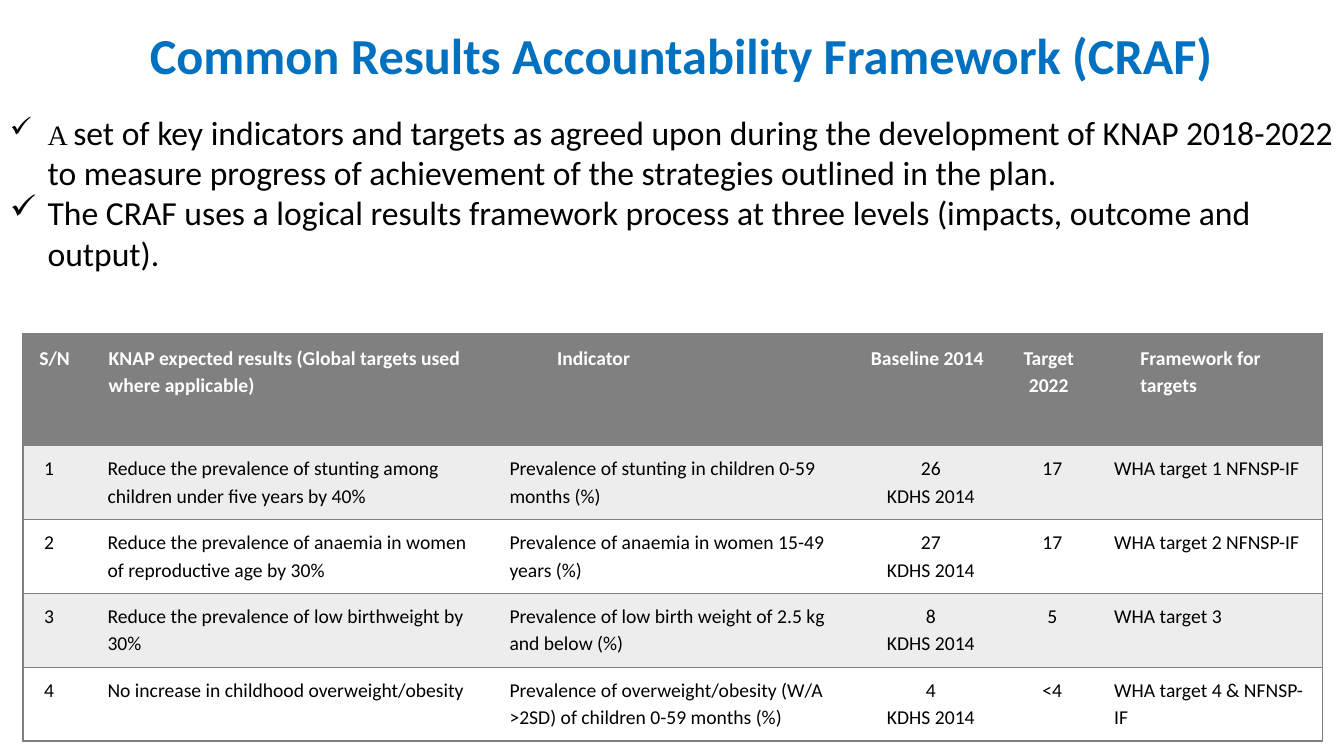
import pptx
import pptx.dml.color
import pptx.enum.shapes
import pptx.enum.text
import pptx.oxml
import pptx.oxml.ns
import pptx.util
from lxml import etree

Cm = pptx.util.Cm
Pt = pptx.util.Pt
ALIGN = pptx.enum.text.PP_ALIGN
ANCHOR = pptx.enum.text.MSO_ANCHOR
qn = pptx.oxml.ns.qn

COLORS = {"title": "0070C0", "text": "000000", "white": "FFFFFF",
          "grey": "808080", "band": "EDEDED"}
NO_STYLE = "{2D5ABB26-0587-4C30-8999-92F81FD0307C}"

TITLE = "Common Results Accountability Framework (CRAF)"
# Each bullet is a list of (text, size, font) pieces
BULLETS = [
    [("A ", 20, "Times New Roman"),
     ("set of key indicators and targets as agreed upon during the development of "
      "KNAP 2018-2022 to measure progress of achievement of the strategies outlined "
      "in the plan.", 24, "Calibri")],
    [("The CRAF uses a logical results framework process at three levels "
      "(impacts, outcome and output).", 24, "Calibri")],
]

COLUMN_WIDTHS = [1.6, 10.13, 9.12, 3.73, 2.39, 5.77]
HEADER_INDENTS = [0.03, 0.18, 1.35, 0, 0, 0.81]
BODY_INDENT = 0.15
CENTERED_COLUMNS = (3, 4)
HEADER_HEIGHT, ROW_HEIGHT = 2.82, 1.86
# A line break inside a cell starts a new paragraph
ROWS = [
    ["S/N", "KNAP expected results (Global targets used where applicable)",
     "Indicator", "Baseline 2014", "Target\n2022", "Framework for targets"],
    ["1", "Reduce the prevalence of stunting among children under five years by 40%",
     "Prevalence of stunting in children 0-59 months (%)",
     "26\nKDHS 2014", "17", "WHA target 1 NFNSP-IF"],
    ["2", "Reduce the prevalence of anaemia in women of reproductive age by 30%",
     "Prevalence of anaemia in women 15-49 years (%)",
     "27\nKDHS 2014", "17", "WHA target 2 NFNSP-IF"],
    ["3", "Reduce the prevalence of low birthweight by 30%",
     "Prevalence of low birth weight of 2.5 kg and below (%)",
     "8\nKDHS 2014", "5", "WHA target 3"],
    ["4", "No increase in childhood overweight/obesity",
     "Prevalence of overweight/obesity (W/A >2SD) of children 0-59 months (%)",
     "4\nKDHS 2014", "<4", "WHA target 4 & NFNSP-IF"],
]


def rgb(name):
    return pptx.dml.color.RGBColor.from_string(COLORS[name])


def write_text(paragraph, text, size=14, font="Calibri", color="text", bold=False,
               align=ALIGN.LEFT, spacing=1.0, indent=0, hanging=0):
    """Add one run to the paragraph and format both."""
    paragraph.alignment = align
    paragraph.line_spacing = spacing
    properties = paragraph._p.get_or_add_pPr()
    properties.set("marL", str(Cm(indent)))
    properties.set("indent", str(-Cm(hanging)))
    run = paragraph.add_run()
    run.text = text
    run.font.size = Pt(size)
    run.font.name = font
    run.font.bold = bold
    run.font.color.rgb = rgb(color)


def next_paragraph(text_frame, index):
    return text_frame.add_paragraph() if index else text_frame.paragraphs[0]


def add_title(slide, left, top, width, height):
    box = slide.shapes.add_textbox(Cm(left), Cm(top), Cm(width), Cm(height))
    text_frame = box.text_frame
    text_frame.word_wrap = True
    text_frame.vertical_anchor = ANCHOR.MIDDLE
    write_text(text_frame.paragraphs[0], TITLE, size=36, color="title", bold=True,
               align=ALIGN.CENTER, spacing=0.9)


def add_bullets(slide, left, top, width, height):
    panel = slide.shapes.add_shape(pptx.enum.shapes.MSO_SHAPE.RECTANGLE,
                                   Cm(left), Cm(top), Cm(width), Cm(height))
    panel.shadow.inherit = False
    panel.fill.solid()
    panel.fill.fore_color.rgb = rgb("white")
    panel.line.color.rgb = rgb("white")
    panel.line.width = Pt(0.5)
    text_frame = panel.text_frame
    text_frame.word_wrap = True
    text_frame.vertical_anchor = ANCHOR.TOP
    for index, pieces in enumerate(BULLETS):
        paragraph = next_paragraph(text_frame, index)
        for text, size, font in pieces:
            write_text(paragraph, text, size=size, font=font, indent=0.95, hanging=0.95)
        bullet = etree.SubElement(paragraph._p.get_or_add_pPr(), qn("a:buChar"))
        bullet.set("char", "✓")


def set_borders(cell, sides):
    """Draw a thin grey line on the given sides and none on the others."""
    properties = cell._tc.get_or_add_tcPr()
    for position, side in enumerate("LRTB"):
        line = etree.Element(qn("a:ln" + side), w=str(Pt(1)))
        if side in sides:
            fill = etree.SubElement(line, qn("a:solidFill"))
            etree.SubElement(fill, qn("a:srgbClr"), val=COLORS["grey"])
        else:
            etree.SubElement(line, qn("a:noFill"))
        properties.insert(position, line)


def fill_cell(cell, text, row, column):
    header = row == 0
    inset = Cm(0.23 if header else 0.2)
    cell.margin_left = Cm(0.38)
    cell.margin_right = cell.margin_top = cell.margin_bottom = inset
    cell.fill.solid()
    cell.fill.fore_color.rgb = rgb("grey" if header else "band" if row % 2 else "white")
    for index, line in enumerate(text.split("\n")):
        write_text(next_paragraph(cell.text_frame, index), line,
                   color="white" if header else "text", bold=header, spacing=1.15,
                   align=ALIGN.CENTER if column in CENTERED_COLUMNS else ALIGN.LEFT,
                   indent=HEADER_INDENTS[column] if header else BODY_INDENT)
    sides = "TB"
    if column == 0:
        sides += "L"
    if column == len(COLUMN_WIDTHS) - 1:
        sides += "R"
    set_borders(cell, sides)


def add_results_table(slide, left, top):
    heights = [HEADER_HEIGHT] + [ROW_HEIGHT] * (len(ROWS) - 1)
    frame = slide.shapes.add_table(len(ROWS), len(COLUMN_WIDTHS), Cm(left), Cm(top),
                                   Cm(sum(COLUMN_WIDTHS)), Cm(sum(heights)))
    table = frame.table
    table._tbl.tblPr.find(qn("a:tableStyleId")).text = NO_STYLE
    for column, width in zip(table.columns, COLUMN_WIDTHS):
        column.width = Cm(width)
    for row, height in zip(table.rows, heights):
        row.height = Cm(height)
    for row, texts in enumerate(ROWS):
        for column, text in enumerate(texts):
            fill_cell(table.cell(row, column), text, row, column)


def main():
    presentation = pptx.Presentation()
    presentation.slide_width = Cm(33.87)
    presentation.slide_height = Cm(19.05)
    slide = presentation.slides.add_slide(presentation.slide_layouts[6])
    add_results_table(slide, 0.58, 8.41)
    add_bullets(slide, 0, 2.69, 33.87, 4.37)
    add_title(slide, 1.4, 0.46, 31.55, 2.03)
    presentation.save("out.pptx")


if __name__ == "__main__":
    main()
